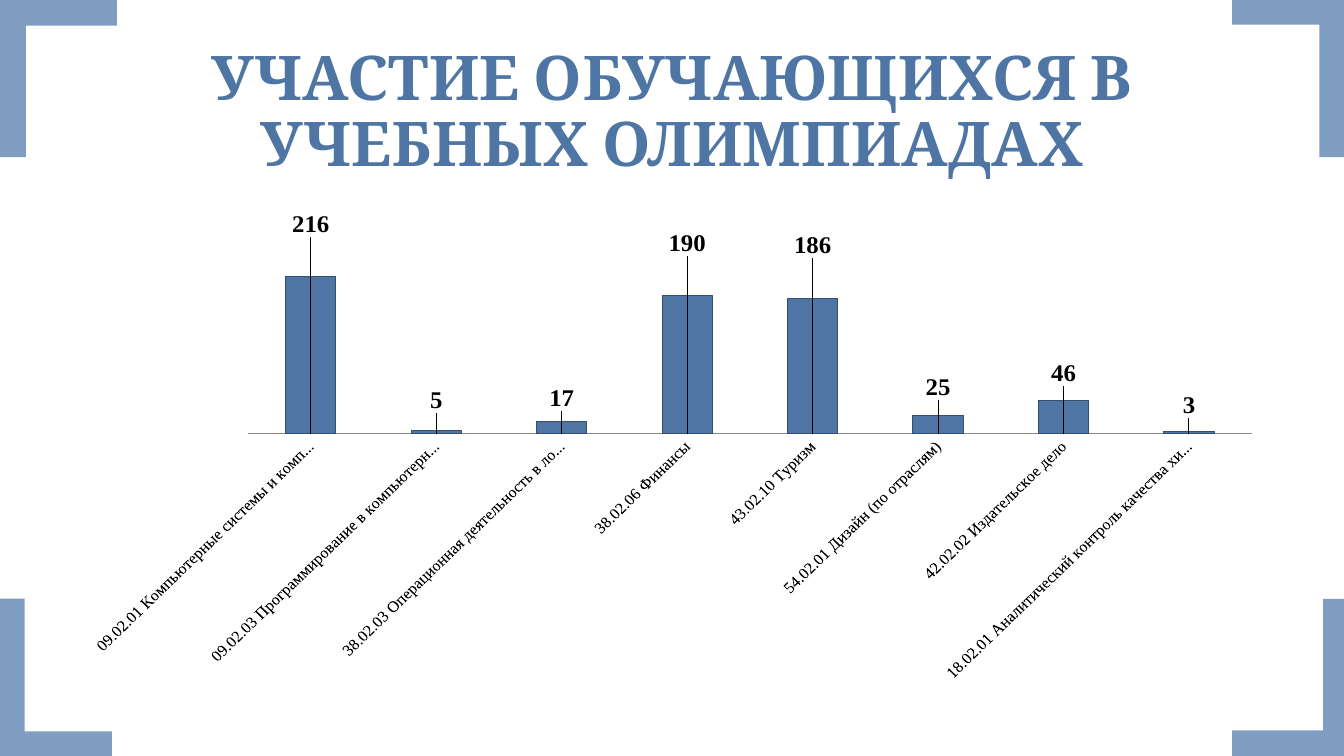
from lxml import etree
from pptx import Presentation
from pptx.chart import data as chart_data
from pptx.dml import color
from pptx.enum import chart as charts, shapes, text
from pptx.oxml import ns
from pptx.util import Inches, Pt

BLUE, DARK_BLUE, CORNER_BLUE = "4E75A3", "344E6D", "809EC2"
BLACK, AXIS_GREY = "000000", "898989"
SERIF = "Times New Roman"
CHART_HEIGHT = 4.76
PARTICIPANTS = [
    ("09.02.01 Компьютерные системы и комплексы", 216, -2.01),
    ("09.02.03 Программирование в компьютерных системах", 5, -0.17),
    ("38.02.03 Операционная деятельность в логистике", 17, -0.2),
    ("38.02.06 Финансы", 190, -1.82),
    ("43.02.10 Туризм", 186, -1.79),
    ("54.02.01 Дизайн (по отраслям)", 25, -0.31),
    ("42.02.02 Издательское дело", 46, -0.45),
    ("18.02.01 Аналитический контроль качества химических соединений", 3, -0.12),
]
CORNERS = [
    (0, 5.94, 1.11, 1.56, 0),
    (12.22, 0, 1.11, 1.56, 180),
    (12.02, 6.14, 1.56, 1.16, 270),
    (-0.2, 0.2, 1.56, 1.16, 90),
]


def rgb(value):
    return color.RGBColor.from_string(value)


def set_font(font, name, size, ink, bold=False):
    font.name, font.size, font.bold = name, Pt(size), bold
    font.color.rgb = rgb(ink)


def add_corner(slide, left, top, width, height, rotation):
    corner = slide.shapes.add_shape(
        shapes.MSO_SHAPE.CORNER, Inches(left), Inches(top), Inches(width), Inches(height))
    corner.adjustments[0], corner.adjustments[1] = 0.22, 0.22
    corner.rotation = rotation
    corner.shadow.inherit = False
    corner.fill.solid()
    corner.fill.fore_color.rgb = rgb(CORNER_BLUE)
    corner.line.fill.background()


def add_text(slide, words, left, top, width, height, **font_format):
    frame = slide.shapes.add_textbox(
        Inches(left), Inches(top), Inches(width), Inches(height)).text_frame
    frame.word_wrap = True
    frame.vertical_anchor = text.MSO_ANCHOR.MIDDLE
    paragraph = frame.paragraphs[0]
    paragraph.alignment = text.PP_ALIGN.CENTER
    paragraph.line_spacing = 0.9
    run = paragraph.add_run()
    run.text = words
    set_font(run.font, **font_format)


def make_layout(**values):
    layout = etree.Element(ns.qn("c:layout"))
    manual = etree.SubElement(layout, ns.qn("c:manualLayout"))
    for tag, value in values.items():
        etree.SubElement(manual, ns.qn(f"c:{tag}")).set("val", str(value))
    return layout


def style_axes(chart):
    programs, counts = chart.category_axis, chart.value_axis
    counts.visible = False
    counts.has_major_gridlines = False
    counts.minimum_scale, counts.maximum_scale = 0, 250
    programs.major_tick_mark = charts.XL_TICK_MARK.NONE
    programs.format.line.color.rgb = rgb(AXIS_GREY)
    set_font(programs.tick_labels.font, SERIF, 12, BLACK)
    slant = programs._element.find(ns.qn("c:txPr")).find(ns.qn("a:bodyPr"))
    slant.set("rot", "-2700000")


def style_labels(series):
    labels = series.data_labels
    labels.show_value = True
    for label in [labels] + [series.points[i].data_label for i in range(len(PARTICIPANTS))]:
        label.position = charts.XL_LABEL_POSITION.INSIDE_BASE
        set_font(label.font, SERIF, 18, BLACK, bold=True)
    for mark, (_, _, shift) in zip(labels._element.findall(ns.qn("c:dLbl")), PARTICIPANTS):
        mark.find(ns.qn("c:idx")).addnext(make_layout(x=0, y=round(shift / CHART_HEIGHT, 3)))


def add_participation_chart(slide):
    source = chart_data.CategoryChartData()
    source.categories = [program for program, _, _ in PARTICIPANTS]
    source.add_series("Series 1", [count for _, count, _ in PARTICIPANTS])
    chart = slide.shapes.add_chart(
        charts.XL_CHART_TYPE.COLUMN_STACKED, Inches(0.92), Inches(2),
        Inches(11.5), Inches(CHART_HEIGHT), source).chart
    chart.has_legend = False
    chart.has_title = False
    set_font(chart.font, "Calibri", 18, BLACK)
    style_axes(chart)
    plot = chart.plots[0]
    plot.gap_width, plot.overlap = 150, 100
    plot.vary_by_categories = False
    series = plot.series[0]
    series.format.fill.solid()
    series.format.fill.fore_color.rgb = rgb(BLUE)
    series.format.line.color.rgb = rgb(DARK_BLUE)
    series.format.line.width = Pt(0.75)
    style_labels(series)
    area = chart._chartSpace.chart.plotArea
    for old in area.findall(ns.qn("c:layout")):
        area.remove(old)
    area.insert(0, make_layout(layoutTarget="inner", xMode="edge", yMode="edge",
                               x=0.12, y=0.11, w=0.88, h=0.4))


def main():
    deck = Presentation()
    deck.slide_width, deck.slide_height = Inches(13.33), Inches(7.5)
    slide = deck.slides.add_slide(deck.slide_layouts[6])
    for corner in CORNERS:
        add_corner(slide, *corner)
    add_text(slide, "УЧАСТИЕ ОБУЧАЮЩИХСЯ В УЧЕБНЫХ ОЛИМПИАДАХ", 0.92, 0.4, 11.5, 1.45,
             name="Cambria", size=44, ink=BLUE, bold=True)
    add_participation_chart(slide)
    deck.save("out.pptx")


if __name__ == "__main__":
    main()
